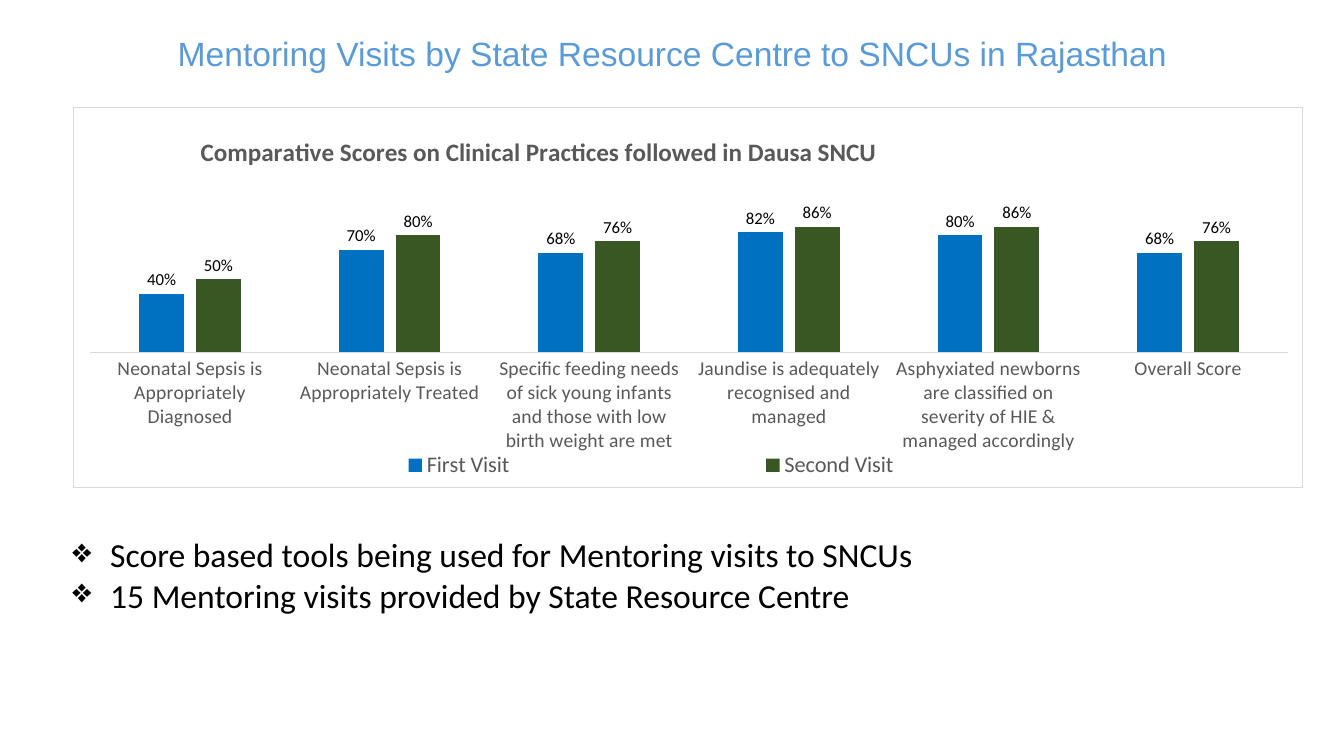
"""Build a slide comparing clinical practice scores across two mentoring visits."""
from lxml import etree
from pptx import Presentation
from pptx import util as u
from pptx.chart import data as cd
from pptx.dml import color
from pptx.enum import chart as ce, text
from pptx.oxml import ns

TITLE = "Mentoring Visits by State Resource Centre to SNCUs in Rajasthan"
CHART_TITLE = "Comparative Scores on Clinical Practices followed in Dausa SNCU"
CATEGORIES = [
    "Neonatal Sepsis is Appropriately Diagnosed",
    "Neonatal Sepsis is Appropriately Treated",
    "Specific feeding needs of sick young infants and those with low birth weight are met",
    "Jaundise is adequately recognised and managed",
    "Asphyxiated newborns are classified on severity of HIE & managed accordingly",
    "Overall Score",
]
SERIES = [
    ("First Visit", "0070C0", (0.4, 0.7, 0.68, 0.82, 0.8, 0.68)),
    ("Second Visit", "385723", (0.5, 0.8, 0.76, 0.86, 0.86, 0.76)),
]
BULLETS = [
    "Score based tools being used for Mentoring visits to SNCUs",
    "15 Mentoring visits provided by State Resource Centre",
]
BLACK, GREY, RULE, BLUE = "000000", "595959", "D9D9D9", "5B9BD5"
INDENT = 27


def rgb(value):
    return color.RGBColor.from_string(value)


def set_font(f, size, value, name="Calibri", bold=False):
    f.size, f.name, f.bold = u.Pt(size), name, bold
    f.color.rgb = rgb(value)


def add_text(s, box, lines, align, size, value, name):
    tf = s.shapes.add_textbox(*map(u.Pt, box)).text_frame
    tf.word_wrap = True
    tf.auto_size = text.MSO_AUTO_SIZE.SHAPE_TO_FIT_TEXT
    tf.text = "\n".join(lines)
    for p in tf.paragraphs:
        p.alignment = align
        set_font(p.runs[0].font, size, value, name)
    return tf


def add_bullet(p):
    pPr = p._p.get_or_add_pPr()
    pPr.set("marL", str(u.Pt(INDENT)))
    pPr.set("indent", str(-u.Pt(INDENT)))
    etree.SubElement(pPr, ns.qn("a:buChar")).set("char", "❖")


def set_layout(parent, **parts):
    for old in parent.findall(ns.qn("c:layout")):
        parent.remove(old)
    layout = etree.Element(ns.qn("c:layout"))
    manual = etree.SubElement(layout, ns.qn("c:manualLayout"))
    for tag, value in parts.items():
        etree.SubElement(manual, ns.qn("c:" + tag)).set("val", str(value))
    overlay = parent.find(ns.qn("c:overlay"))
    if overlay is None:
        parent.insert(0, layout)
    else:
        overlay.addprevious(layout)


def add_border(chart, value, width):
    spPr = etree.Element(ns.qn("c:spPr"))
    etree.SubElement(spPr, ns.qn("a:noFill"))
    ln = etree.SubElement(spPr, ns.qn("a:ln"), w=str(u.Pt(width)))
    fill = etree.SubElement(ln, ns.qn("a:solidFill"))
    etree.SubElement(fill, ns.qn("a:srgbClr")).set("val", value)
    chart._chartSpace.find(ns.qn("c:chart")).addnext(spPr)


def add_scores(s, box):
    data = cd.CategoryChartData(number_format="0%")
    data.categories = CATEGORIES
    for name, _, values in SERIES:
        data.add_series(name, values)
    chart = s.shapes.add_chart(
        ce.XL_CHART_TYPE.COLUMN_CLUSTERED, *map(u.Pt, box), data).chart
    set_font(chart.font, 10, BLACK)
    add_border(chart, RULE, 0.75)

    chart.has_title = True
    title = chart.chart_title
    title.text_frame.text = CHART_TITLE
    set_font(title.text_frame.paragraphs[0].runs[0].font, 18, GREY, bold=True)
    title.include_in_layout = False
    set_layout(title._element, xMode="edge", yMode="edge", x=0.1, y=0.06)

    plot = chart.plots[0]
    plot.gap_width, plot.overlap, plot.vary_by_categories = 219, -27, False
    set_layout(chart._chartSpace.chart.plotArea, layoutTarget="inner",
               xMode="edge", yMode="edge", x=0.014, y=0.26, w=0.974, h=0.385)
    for series, (_, fill, _) in zip(plot.series, SERIES):
        series.format.fill.solid()
        series.format.fill.fore_color.rgb = rgb(fill)
        labels = series.data_labels
        labels.show_value = True
        labels.number_format, labels.number_format_is_linked = "0%", False
        labels.position = ce.XL_LABEL_POSITION.OUTSIDE_END
        set_font(labels.font, 12, BLACK)

    cat, val = chart.category_axis, chart.value_axis
    cat.major_tick_mark = ce.XL_TICK_MARK.NONE
    cat.format.line.color.rgb = rgb(RULE)
    cat.format.line.width = u.Pt(0.75)
    set_font(cat.tick_labels.font, 14, GREY)
    val.minimum_scale, val.maximum_scale = 0, 1
    val.has_major_gridlines = val.visible = False

    chart.has_legend = True
    legend = chart.legend
    legend.position = ce.XL_LEGEND_POSITION.RIGHT
    legend.include_in_layout = False
    set_font(legend.font, 16, GREY)
    set_layout(legend._element, xMode="edge", yMode="edge",
               x=0.07, y=0.91, w=0.8, h=0.08)


def main():
    prs = Presentation()
    prs.slide_width, prs.slide_height = u.Pt(960), u.Pt(540)
    s = prs.slides.add_slide(prs.slide_layouts[6])
    add_text(s, (44.6, 20, 871.2, 36), [TITLE], text.PP_ALIGN.CENTER, 24, BLUE, "Arial")
    add_scores(s, (51.8, 76.3, 879.1, 272.2))
    tf = add_text(s, (44.6, 378, 886.3, 65.5), BULLETS,
                  text.PP_ALIGN.JUSTIFY, 24, BLACK, "Calibri")
    for p in tf.paragraphs:
        add_bullet(p)
    prs.save("out.pptx")


if __name__ == "__main__":
    main()
